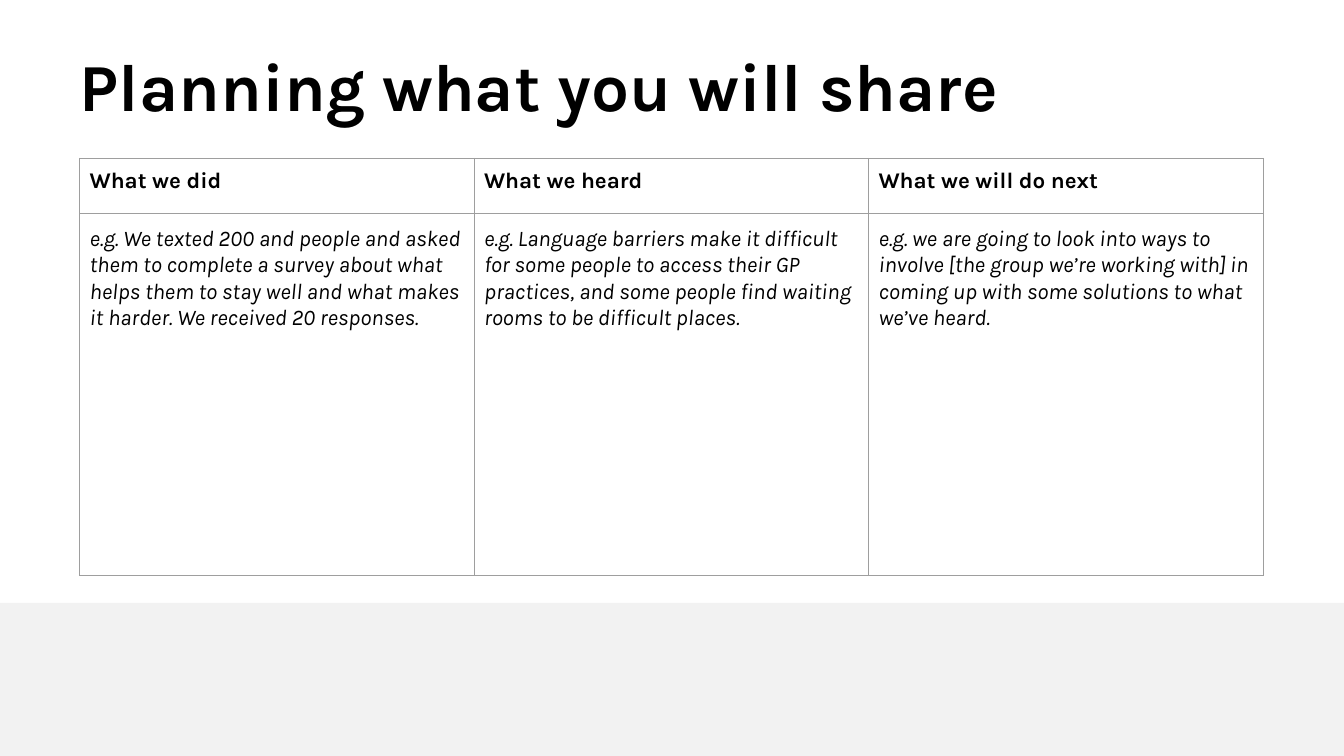
from dataclasses import dataclass

from lxml.etree import SubElement
from pptx import Presentation
from pptx.dml.color import RGBColor
from pptx.enum.shapes import MSO_SHAPE as Shape
from pptx.enum.text import MSO_ANCHOR as Anchor
from pptx.oxml.ns import qn
from pptx.util import Cm, Pt

FONT = "Karla"
COLORS = {"text": "000000", "band": "F2F2F2", "border": "9E9E9E", "back": "FFFFFF"}
COL_WIDTH = 9.94
ROW_HEIGHTS = (1.39, 9.13)
CELL_MARGIN = 0.25
BODY_TOP_MARGIN = 0.32


@dataclass
class PlanColumn:
    heading: str
    example: str


PLAN = [
    PlanColumn(
        "What we did",
        "e.g. We texted 200 and people and asked them to complete a survey about "
        "what helps them to stay well and what makes it harder. "
        "We received 20 responses.",
    ),
    PlanColumn(
        "What we heard",
        "e.g. Language barriers make it difficult for some people to access their "
        "GP practices, and some people find waiting rooms to be difficult places.",
    ),
    PlanColumn(
        "What we will do next",
        "e.g. we are going to look into ways to involve [the group we’re working "
        "with] in coming up with some solutions to what we’ve heard.",
    ),
]


def color(name: str) -> RGBColor:
    return RGBColor.from_string(COLORS[name])


def set_text(tf, text: str, size: int, bold: bool = False, italic: bool = False) -> None:
    tf.text = text
    font = tf.paragraphs[0].runs[0].font
    font.name, font.size = FONT, Pt(size)
    font.bold, font.italic = bold, italic
    font.color.rgb = color("text")


def set_borders(cell) -> None:
    tc_pr = cell._tc.get_or_add_tcPr()
    for i, side in enumerate(("lnL", "lnR", "lnT", "lnB")):
        ln = SubElement(tc_pr, qn(f"a:{side}"), w=str(Pt(0.75)))
        fill = SubElement(ln, qn("a:solidFill"))
        SubElement(fill, qn("a:srgbClr"), val=COLORS["border"])
        tc_pr.insert(i, ln)


def fill_cell(cell, text: str, is_heading: bool) -> None:
    cell.margin_left = cell.margin_right = cell.margin_bottom = Cm(CELL_MARGIN)
    cell.margin_top = Cm(CELL_MARGIN if is_heading else BODY_TOP_MARGIN)
    cell.vertical_anchor = Anchor.TOP
    set_text(cell.text_frame, text, 16, bold=is_heading, italic=not is_heading)
    cell.fill.background()
    set_borders(cell)


def add_band(s) -> None:
    band = s.shapes.add_shape(Shape.RECTANGLE, 0, Cm(15.19), Cm(33.87), Cm(3.86))
    band.shadow.inherit = False
    band.fill.solid()
    band.fill.fore_color.rgb = color("band")
    band.line.fill.background()


def add_title(s, text: str) -> None:
    sp = s.shapes.add_textbox(Cm(2.01), Cm(1.35), Cm(28.14), Cm(1.75))
    tf = sp.text_frame
    tf.word_wrap = True
    tf.margin_left = tf.margin_right = tf.margin_top = tf.margin_bottom = 0
    set_text(tf, text, 48, bold=True)
    tf.paragraphs[0].line_spacing = 0.9


def add_plan_table(s, plan: list[PlanColumn]) -> None:
    table = s.shapes.add_table(
        len(ROW_HEIGHTS), len(plan), Cm(2.01), Cm(3.99),
        Cm(COL_WIDTH * len(plan)), Cm(sum(ROW_HEIGHTS)),
    ).table
    table.first_row = table.horz_banding = False
    for row, height in zip(table.rows, ROW_HEIGHTS):
        row.height = Cm(height)
    for i, column in enumerate(plan):
        table.columns[i].width = Cm(COL_WIDTH)
        fill_cell(table.cell(0, i), column.heading, True)
        fill_cell(table.cell(1, i), column.example, False)


def main() -> None:
    prs = Presentation()
    prs.slide_width, prs.slide_height = Cm(33.87), Cm(19.05)
    s = prs.slides.add_slide(prs.slide_layouts[6])
    s.background.fill.solid()
    s.background.fill.fore_color.rgb = color("back")

    # Footer band, title and planning table
    add_band(s)
    add_title(s, "Planning what you will share")
    add_plan_table(s, PLAN)
    prs.save("out.pptx")


if __name__ == "__main__":
    main()
